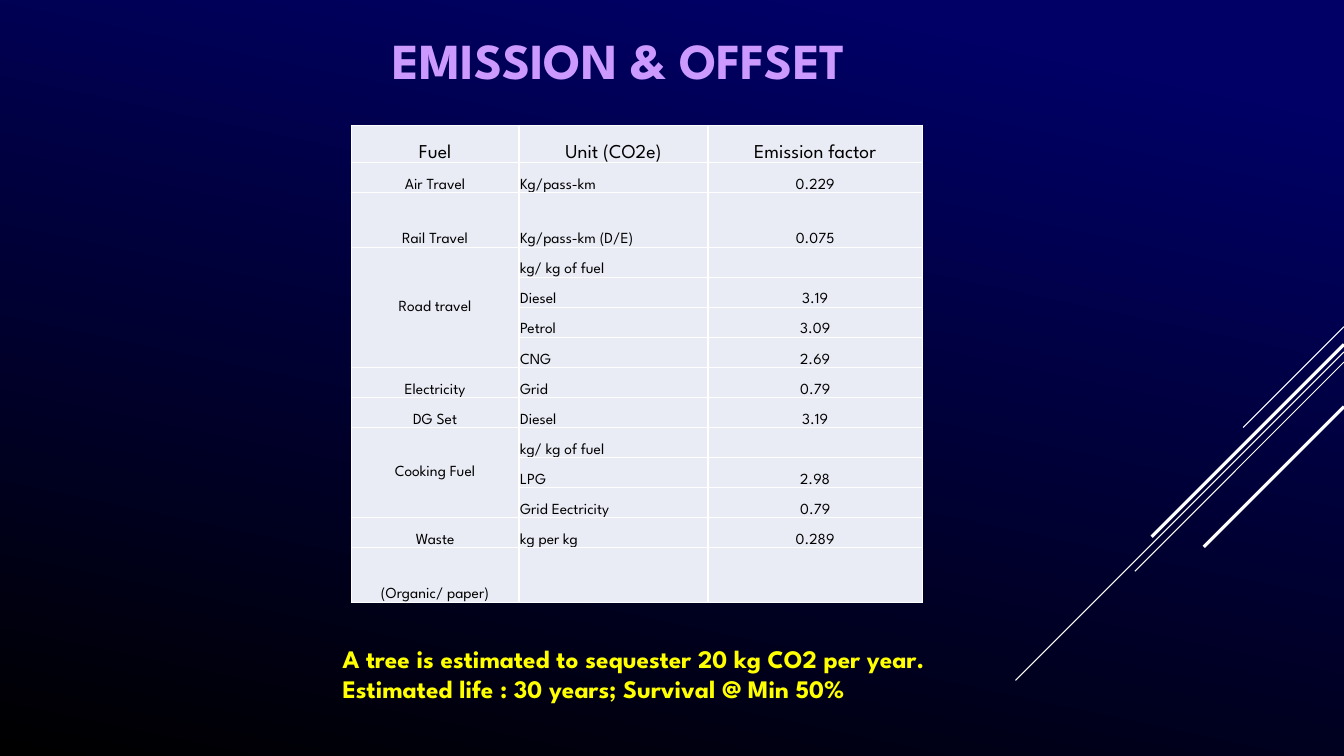
from pptx import Presentation, oxml
from pptx import util as u
from pptx.dml.color import RGBColor
from pptx.enum import shapes, text
from pptx.oxml import ns

NAVY = RGBColor(0x00, 0x00, 0x66)
BLACK = RGBColor(0x00, 0x00, 0x00)
WHITE = RGBColor(0xFF, 0xFF, 0xFF)
LILAC = RGBColor(0xCC, 0x99, 0xFF)
YELLOW = RGBColor(0xFF, 0xFF, 0x00)
PALE = RGBColor(0xE9, 0xEB, 0xF5)

COLUMNS, ROWS = 160, 90

FACTORS = [
    ("Fuel", "Unit (CO2e)", "Emission factor"),
    ("Air Travel", "Kg/pass-km", "0.229"),
    ("Rail Travel", "Kg/pass-km (D/E)", "0.075"),
    ("Road travel", "kg/ kg of fuel", ""),
    (None, "Diesel", "3.19"),
    (None, "Petrol", "3.09"),
    (None, "CNG", "2.69"),
    ("Electricity", "Grid", "0.79"),
    ("DG Set", "Diesel", "3.19"),
    ("Cooking Fuel", "kg/ kg of fuel", ""),
    (None, "LPG", "2.98"),
    (None, "Grid Eectricity", "0.79"),
    ("Waste", "kg per kg", "0.289"),
    ("(Organic/ paper)", "", ""),
]
FACTOR_WIDTHS = (20, 22.5, 25.5)
HEADER_HEIGHT, FACTOR_HEIGHT, TALL_HEIGHT = 4.46, 3.58, 6.5
TALL_ROWS = ("Rail Travel", "(Organic/ paper)")
RAYS = [(38.9, 12, 0.75), (41.9, 39.1, 0.75), (43.1, 24.9, 0.75),
        (41, 22.9, 2.25), (48.4, 16.7, 2.25)]


def assign(target, formats):
    for name, value in formats.items():
        setattr(target, name, value)


class EmissionSlide:
    font = "League Spartan"

    def __init__(self, deck):
        self.col = deck.slide_width / COLUMNS
        self.row = deck.slide_height / ROWS
        self.slide = deck.slides.add_slide(deck.slide_layouts[5])

    def x(self, columns):
        return u.Emu(round(columns * self.col))

    def y(self, rows):
        return u.Emu(round(rows * self.row))

    def box(self, left, top, width, height):
        return self.x(left), self.y(top), self.x(width), self.y(height)

    def wording(self, frame, words, size, color, bold=False, align=text.PP_ALIGN.LEFT):
        paragraph = frame.paragraphs[0]
        paragraph.alignment = align
        run = paragraph.add_run()
        run.text = words
        assign(run.font, {"name": self.font, "size": u.Pt(size), "bold": bold})
        run.font.color.rgb = color

    def backdrop(self, stops, clockwise):
        fill = self.slide.background.fill
        fill.gradient()
        fill.gradient_angle = 360 - clockwise
        for stop, (position, color) in zip(fill.gradient_stops, stops):
            stop.color.rgb = color
            stop.position = position

    def ray(self, top, reach, weight):
        line = self.slide.shapes.add_connector(
            shapes.MSO_CONNECTOR.STRAIGHT, self.x(COLUMNS), self.y(top),
            self.x(COLUMNS - reach), self.y(top + reach))
        line.line.color.rgb = WHITE
        line.line.width = u.Pt(weight)
        line._element.spPr.append(oxml.parse_xml(f"<a:effectLst {ns.nsdecls('a')}/>"))

    def heading(self, words, place):
        title = self.slide.shapes.title
        assign(title, dict(zip(("left", "top", "width", "height"), self.box(*place))))
        assign(title.text_frame, {"word_wrap": True,
                                  "auto_size": text.MSO_AUTO_SIZE.NONE,
                                  "vertical_anchor": text.MSO_ANCHOR.TOP})
        self.wording(title.text_frame, words, 36, LILAC, True, text.PP_ALIGN.CENTER)

    def note(self, words, place):
        frame = self.slide.shapes.add_textbox(*self.box(*place)).text_frame
        assign(frame, {"word_wrap": True, "auto_size": text.MSO_AUTO_SIZE.SHAPE_TO_FIT_TEXT})
        self.wording(frame, words, 18, YELLOW, True)

    def cell(self, cell, words, size, align, anchor):
        properties = cell._tc.get_or_add_tcPr()
        for side in "LRTB":
            properties.append(oxml.parse_xml(
                f"<a:ln{side} {ns.nsdecls('a')} w='12700'><a:solidFill>"
                f"<a:srgbClr val='{WHITE}'/></a:solidFill></a:ln{side}>"))
        cell.fill.solid()
        cell.fill.fore_color.rgb = PALE
        edge = u.Inches(0.01)
        assign(cell, {"margin_left": edge, "margin_right": edge, "margin_top": edge,
                      "margin_bottom": 0, "vertical_anchor": anchor})
        if words is not None:
            self.wording(cell.text_frame, words, size, BLACK, align=align)

    def factors(self, left, top):
        heights = [HEADER_HEIGHT] + [
            TALL_HEIGHT if fuel in TALL_ROWS else FACTOR_HEIGHT for fuel, _, _ in FACTORS[1:]]
        place = self.box(left, top, sum(FACTOR_WIDTHS), sum(heights))
        table = self.slide.shapes.add_table(len(FACTORS), len(FACTOR_WIDTHS), *place).table
        assign(table, {"first_row": False, "horz_banding": False})
        for column, width in zip(table.columns, FACTOR_WIDTHS):
            column.width = self.x(width)
        fuel_row = 0
        for r, (entry, height) in enumerate(zip(FACTORS, heights)):
            table.rows[r].height = self.y(height)
            if entry[0] is not None:
                fuel_row = r
            group_goes_on = r + 1 < len(FACTORS) and FACTORS[r + 1][0] is None
            for c, words in enumerate(entry):
                left_aligned = c == 1 and r > 0
                self.cell(table.cell(r, c), words, 11 if r else 14,
                          text.PP_ALIGN.LEFT if left_aligned else text.PP_ALIGN.CENTER,
                          text.MSO_ANCHOR.MIDDLE if c == 0 and group_goes_on
                          else text.MSO_ANCHOR.BOTTOM)
            if fuel_row < r and not group_goes_on:
                table.cell(fuel_row, 0).merge(table.cell(r, 0))


def main():
    deck = Presentation()
    deck.slide_width, deck.slide_height = u.Inches(13.33), u.Inches(7.5)
    emission = EmissionSlide(deck)
    emission.backdrop([(0.1, NAVY), (1, BLACK)], 102)
    for ray in RAYS:
        emission.ray(*ray)
    emission.heading("EMISSION & OFFSET ", (18.5, 2.9, 112, 19.8))
    emission.factors(41.8, 14.9)
    emission.note("A tree is estimated to sequester 20 kg CO2 per year. "
                  "Estimated life : 30 years; Survival @ Min 50%", (39.6, 76, 75.6, 8.5))
    deck.save("out.pptx")


if __name__ == "__main__":
    main()
